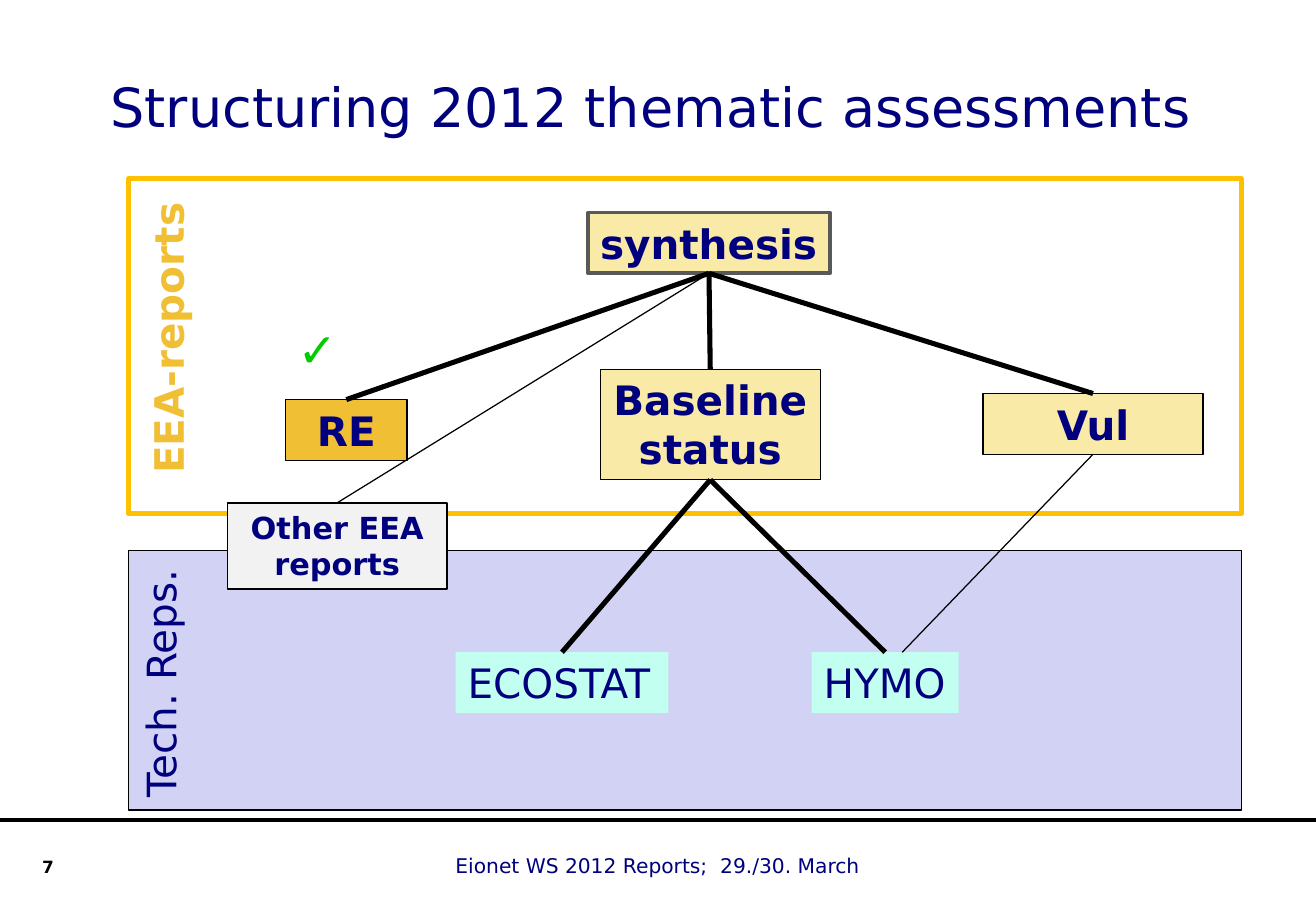
from lxml import etree
from pptx import Presentation
from pptx.dml.color import RGBColor
from pptx.enum.shapes import MSO_CONNECTOR, MSO_SHAPE
from pptx.enum.text import MSO_ANCHOR, MSO_AUTO_SIZE, PP_ALIGN
from pptx.oxml.ns import qn
from pptx.util import Inches, Pt

LEFT, CENTER, RIGHT = PP_ALIGN.LEFT, PP_ALIGN.CENTER, PP_ALIGN.RIGHT
MIDDLE, TOP = MSO_ANCHOR.MIDDLE, MSO_ANCHOR.TOP
GROW = MSO_AUTO_SIZE.SHAPE_TO_FIT_TEXT
RECTANGLE, STRAIGHT = MSO_SHAPE.RECTANGLE, MSO_CONNECTOR.STRAIGHT

NAVY = RGBColor(0x00, 0x00, 0x7E)
BLACK = RGBColor(0x00, 0x00, 0x00)
GRAY = RGBColor(0x59, 0x59, 0x59)
PALE_GRAY = RGBColor(0xF2, 0xF2, 0xF2)
LAVENDER = RGBColor(0xD2, 0xD2, 0xF4)
AMBER = RGBColor(0xFF, 0xC0, 0x00)
GOLD = RGBColor(0xF0, 0xBF, 0x34)
CREAM = RGBColor(0xFA, 0xEA, 0xA8)
MINT = RGBColor(0xC2, 0xFF, 0xF0)
GREEN = RGBColor(0x00, 0xCC, 0x00)

FONT = "DejaVu Sans"
THIN, MEDIUM, THICK = 0.75, 2.25, 3

TITLE = "Structuring 2012 thematic assessments"
TITLE_AT = (0.81, 0.25, 9.8, 1.25)

PANELS = [
    ((1.06, 4.53, 9.16, 2.14), LAVENDER, (BLACK, THIN)),
    ((1.06, 1.47, 9.16, 2.76), None, (AMBER, THICK)),
]

REPORT = {"bold": True, "align": CENTER, "wrap": True}
NODES = {
    "RE": ((2.35, 3.29, 1, 0.5), GOLD, (BLACK, THIN), REPORT),
    "Baseline status": ((4.94, 3.04, 1.81, 0.91), CREAM, (BLACK, THIN), REPORT),
    "Vul": ((8.09, 3.24, 1.81, 0.5), CREAM, (BLACK, THIN), REPORT),
    "HYMO": ((6.68, 5.37, 1.21, 0.5), MINT, None, {}),
    "ECOSTAT": ((3.75, 5.37, 1.75, 0.5), MINT, None, {}),
    "synthesis": ((4.84, 1.75, 1.99, 0.5), CREAM, (GRAY, MEDIUM), {"bold": True}),
    "Other EEA reports": ((1.87, 4.14, 1.81, 0.71), PALE_GRAY, (BLACK, THIN),
                          {**REPORT, "size": 18}),
}

LABELS = [
    ("Tech. Reps.", (0.25, 5.34, 2.14, 0.5), 270, {}),
    ("EEA-reports", (0.15, 2.52, 2.46, 0.5), 270, {"bold": True, "color": GOLD}),
    ("✓", (2.35, 2.59, 0.51, 0.57), 0, {"size": 28, "bold": True, "color": GREEN}),
    ("Eionet WS 2012 Reports;  29./30. March", (3.65, 6.98, 3.66, 0.3), 0, {"size": 12}),
    ("7", (0, 7, 0.54, 0.5), 0,
     {"size": 10, "bold": True, "color": BLACK, "align": RIGHT, "wrap": True}),
]

LINKS = [
    ("synthesis", "RE", THICK, 0),
    ("synthesis", "Vul", THICK, 0),
    ("synthesis", "Baseline status", THICK, 0),
    ("Baseline status", "ECOSTAT", THICK, 0),
    ("Baseline status", "HYMO", THICK, 0),
    ("Vul", "HYMO", THIN, 0.14),
    ("synthesis", "Other EEA reports", THIN, 0),
]

FOOTER_RULE = ((0, 6.75), (10.83, 6.75))


def write(shape, text, size=24, bold=False, color=NAVY, align=LEFT, wrap=False,
          anchor=TOP, auto_size=GROW):
    frame = shape.text_frame
    frame.text = text
    frame.word_wrap = wrap
    frame.auto_size = auto_size
    frame.vertical_anchor = anchor
    paragraph = frame.paragraphs[0]
    paragraph.alignment = align
    paragraph.font.color.rgb = color
    for name, value in {"name": FONT, "size": Pt(size), "bold": bold}.items():
        setattr(paragraph.font, name, value)


def add_box(slide, at, fill, outline):
    box = slide.shapes.add_shape(RECTANGLE, *map(Inches, at))
    box.shadow.inherit = False
    if fill is None:
        box.fill.background()
    else:
        box.fill.solid()
        box.fill.fore_color.rgb = fill
    if outline is None:
        box.line.fill.background()
    else:
        color, width = outline
        box.line.color.rgb = color
        box.line.width = Pt(width)
    return box


def add_line(slide, start, end, width):
    line = slide.shapes.add_connector(STRAIGHT, *map(Inches, (*start, *end)))
    line.line.color.rgb = BLACK
    line.line.width = Pt(width)
    etree.SubElement(line._element.spPr, qn("a:effectLst"))


def main():
    """Build the slide on the structure of the 2012 thematic assessments."""
    prs = Presentation()
    prs.slide_width, prs.slide_height = Inches(10.83), Inches(7.5)
    slide = prs.slides.add_slide(prs.slide_layouts[5])

    title = slide.shapes.title
    for side, value in zip(("left", "top", "width", "height"), TITLE_AT):
        setattr(title, side, Inches(value))
    write(title, TITLE, size=32, wrap=True, anchor=MIDDLE, auto_size=MSO_AUTO_SIZE.NONE)

    add_line(slide, *FOOTER_RULE, MEDIUM)
    for panel in PANELS:
        add_box(slide, *panel)
    for name, (at, fill, outline, style) in NODES.items():
        write(add_box(slide, at, fill, outline), name, **style)
    for text, at, rotation, style in LABELS:
        label = slide.shapes.add_textbox(*map(Inches, at))
        label.rotation = rotation
        write(label, text, **style)

    for parent, child, width, shift in LINKS:
        x, y, w, h = NODES[parent][0]
        child_x, child_y, child_w, _ = NODES[child][0]
        add_line(slide, (x + w / 2, y + h), (child_x + child_w / 2 + shift, child_y), width)

    prs.save("out.pptx")


if __name__ == "__main__":
    main()
